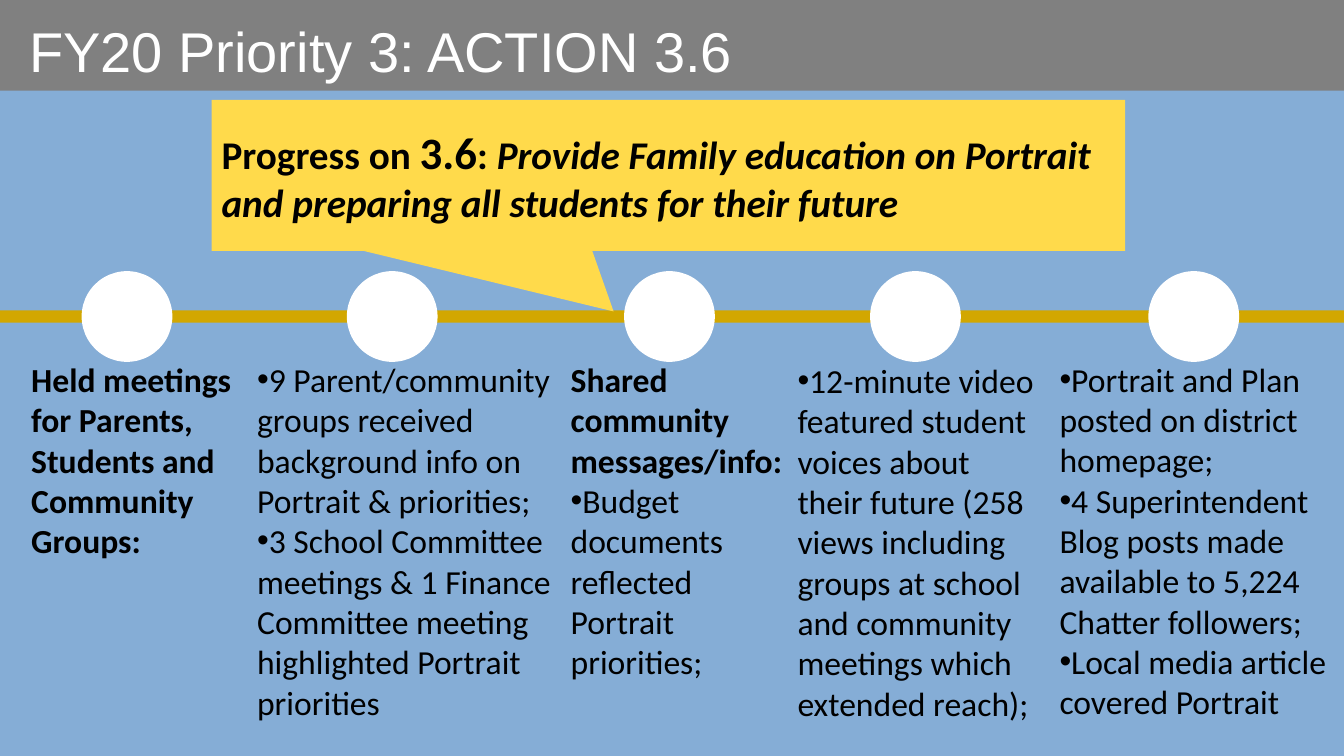
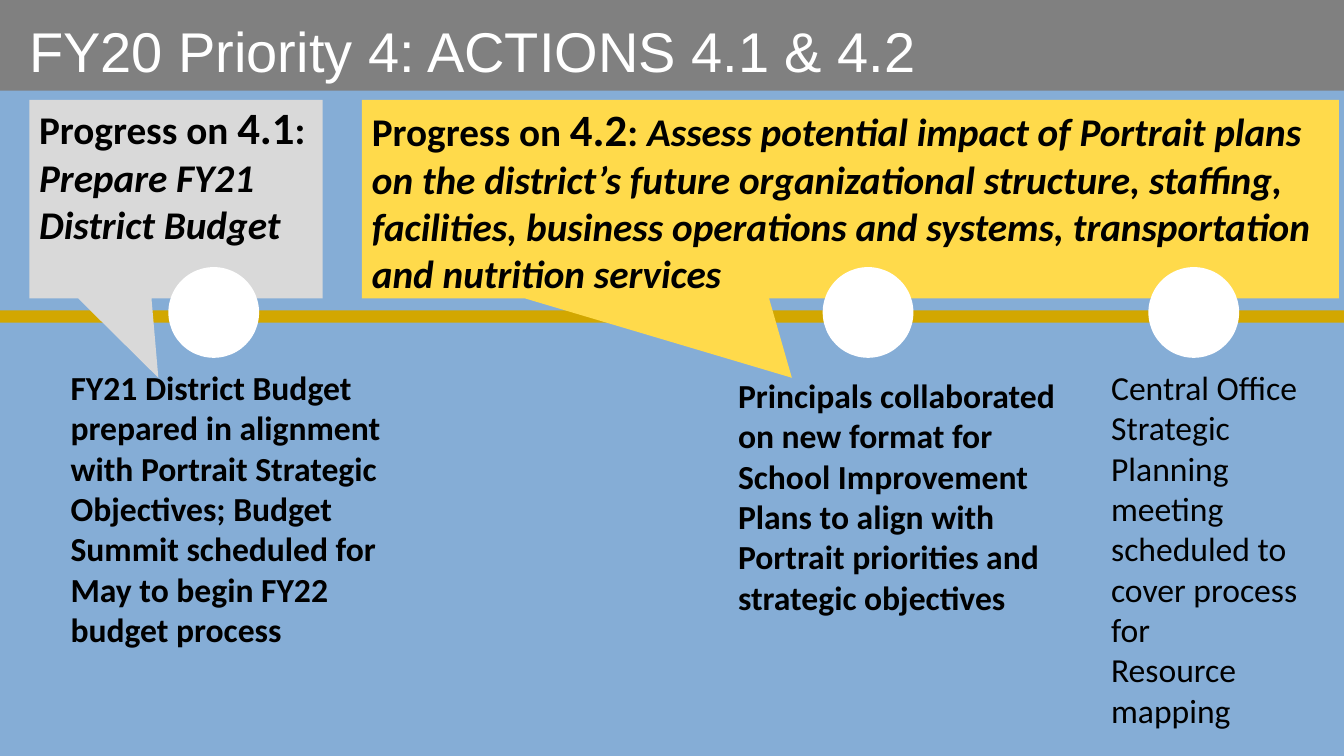
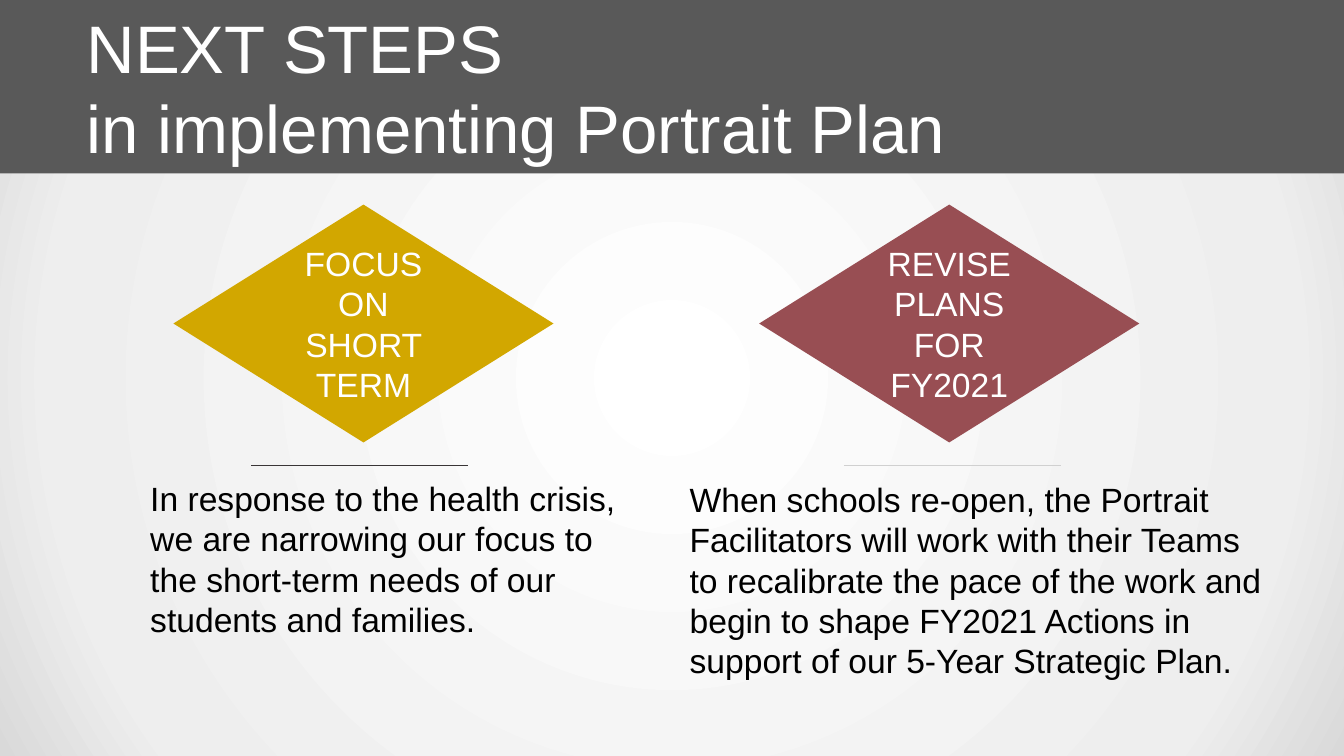
from typing import NamedTuple

from lxml.etree import SubElement
from pptx import Presentation
from pptx.dml.color import RGBColor
from pptx.enum.shapes import MSO_CONNECTOR, MSO_SHAPE
from pptx.enum.text import MSO_ANCHOR, MSO_AUTO_SIZE, PP_ALIGN
from pptx.oxml.ns import qn
from pptx.util import Inches, Pt

COLORS = {
    "sky": "85ADD6", "band": "808080", "dark_band": "595959", "gold": "D2A700",
    "yellow": "FFDA4B", "silver": "D9D9D9", "red": "984E53", "white": "FFFFFF",
    "black": "000000", "charcoal": "393536", "pale_line": "D0D0D0",
}
GLOW_STOPS = ((0, "FFFFFF"), (81, "EEEEEE"), (100, "D9D9D9"))
SLIDE_WIDTH, SLIDE_HEIGHT = 13.33, 7.5
COMPARISON_LAYOUT = 4
CIRCLE_SIZE = 0.9
LINE_FACTOR = 1.2


class Box(NamedTuple):
    left: float
    top: float
    width: float
    height: float


class Line(NamedTuple):
    text: str
    bold: bool = False
    bullet: bool = False
    indent: float = 0


class Column(NamedTuple):
    box: Box
    lines: list[Line]
    font: str = "Calibri"


class Title(NamedTuple):
    lines: list[str]
    color: str
    height: float
    inset: float
    size: int
    drop: float = 0


class Callout(NamedTuple):
    box: Box
    color: str
    action: str
    goal: str
    anchor: MSO_ANCHOR = MSO_ANCHOR.MIDDLE


class Timeline(NamedTuple):
    title: Title
    callouts: list[Callout]
    circle_top: float
    circle_lefts: list[float]
    columns: list[Column]


class Step(NamedTuple):
    left: float
    color: str
    label: str
    rule_left: float
    rule_color: str


def rgb(name: str) -> RGBColor:
    return RGBColor.from_string(COLORS[name])


def place(shape, box: Box) -> None:
    shape.left, shape.top, shape.width, shape.height = map(Inches, box)


def add_filled(page, kind: MSO_SHAPE, box: Box, color: str):
    shape = page.shapes.add_shape(kind, *map(Inches, box))
    shape.shadow.inherit = False
    shape.fill.solid()
    shape.fill.fore_color.rgb = rgb(color)
    shape.line.fill.background()
    return shape


def set_bullet(para, line: Line) -> None:
    properties = para._p.get_or_add_pPr()
    properties.set("marL", str(Inches(line.indent)))
    properties.set("indent", "0")
    if line.bullet:
        SubElement(properties, qn("a:buFont"), typeface="Arial")
        SubElement(properties, qn("a:buChar"), char="•")
    else:
        SubElement(properties, qn("a:buNone"))


def write(frame, lines: list[Line], size: int, font: str, color: str,
          align: PP_ALIGN = PP_ALIGN.LEFT) -> None:
    frame.word_wrap = True
    frame.auto_size = MSO_AUTO_SIZE.NONE
    for index, line in enumerate(lines):
        para = frame.paragraphs[0] if index == 0 else frame.add_paragraph()
        para.text = line.text
        para.alignment = align
        para.space_before = para.space_after = Pt(0)
        para.line_spacing = Pt(size * LINE_FACTOR)
        set_bullet(para, line)
        para.font.size, para.font.name = Pt(size), font
        para.font.bold = line.bold
        para.font.color.rgb = rgb(color)


def add_page(deck, title: Title, columns: list[Column]):
    """Add a page whose title forms the top band, with its text columns."""
    page = deck.slides.add_slide(deck.slide_layouts[COMPARISON_LAYOUT])
    heading = page.shapes.title
    place(heading, Box(0, 0, SLIDE_WIDTH, title.height))
    heading.fill.solid()
    heading.fill.fore_color.rgb = rgb(title.color)
    frame = heading.text_frame
    frame.vertical_anchor = MSO_ANCHOR.MIDDLE
    frame.margin_left = Inches(title.inset)
    frame.margin_top, frame.margin_bottom = Inches(title.drop), 0
    write(frame, [Line(text) for text in title.lines], title.size, "Arial", "white")

    bodies = [holder for holder in page.placeholders if holder.placeholder_format.idx > 0]
    for column in columns:
        if bodies:
            body = bodies.pop(0)
            place(body, column.box)
        else:
            body = page.shapes.add_textbox(*map(Inches, column.box))
        body.text_frame.vertical_anchor = MSO_ANCHOR.TOP
        write(body.text_frame, column.lines, 24, column.font, "black")
    for spare in bodies:
        spare.element.getparent().remove(spare.element)
    return page


def add_callout(page, callout: Callout) -> None:
    shape = add_filled(page, MSO_SHAPE.RECTANGULAR_CALLOUT, callout.box, callout.color)
    shape.adjustments[0], shape.adjustments[1] = -0.06, 0.9
    frame = shape.text_frame
    frame.word_wrap = True
    frame.vertical_anchor = callout.anchor
    frame.margin_top = frame.margin_bottom = 0
    para = frame.paragraphs[0]
    para.alignment = PP_ALIGN.LEFT
    para.font.name, para.font.bold = "Calibri", True
    para.font.color.rgb = rgb("black")
    for text, size, italic in (("Progress on ", 28, False), (callout.action, 32, False),
                               (": ", 28, False), (callout.goal, 28, True)):
        span = para.add_run()
        span.text = text
        span.font.size, span.font.italic = Pt(size), italic


def add_timeline(deck, timeline: Timeline) -> None:
    page = add_page(deck, timeline.title, timeline.columns)
    page.background.fill.solid()
    page.background.fill.fore_color.rgb = rgb("sky")
    add_filled(page, MSO_SHAPE.RECTANGLE, Box(0, 3.08, SLIDE_WIDTH, 0.12), "gold")
    for callout in timeline.callouts:
        add_callout(page, callout)
    for left in timeline.circle_lefts:
        circle = Box(left, timeline.circle_top, CIRCLE_SIZE, CIRCLE_SIZE)
        add_filled(page, MSO_SHAPE.OVAL, circle, "white")


def set_glow(page) -> None:
    """Give the page a radial gradient, lightest in the middle."""
    page.background.fill.gradient()
    gradient = page.element.find(".//" + qn("a:gradFill"))
    for child in list(gradient):
        gradient.remove(child)
    stops = SubElement(gradient, qn("a:gsLst"))
    for percent, color in GLOW_STOPS:
        stop = SubElement(stops, qn("a:gs"), pos=str(percent * 1000))
        SubElement(stop, qn("a:srgbClr"), val=color)
    circle = SubElement(gradient, qn("a:path"), {"path": "circle"})
    SubElement(circle, qn("a:fillToRect"), dict.fromkeys("ltrb", "50000"))


def add_step(page, step: Step) -> None:
    diamond = add_filled(page, MSO_SHAPE.DIAMOND, Box(step.left, 2.03, 3.77, 2.36), step.color)
    diamond.text_frame.vertical_anchor = MSO_ANCHOR.MIDDLE
    write(diamond.text_frame, [Line(step.label)], 24, "Arial", "white", PP_ALIGN.CENTER)
    rule = page.shapes.add_connector(
        MSO_CONNECTOR.STRAIGHT, Inches(step.rule_left), Inches(4.62),
        Inches(step.rule_left + 2.15), Inches(4.62))
    rule.line.color.rgb = rgb(step.rule_color)
    rule.line.width = Pt(0.75)
    SubElement(rule._element.spPr, qn("a:effectLst"))


def priority_title(text: str) -> Title:
    return Title([text], "band", 0.9, 0.29, 40, 0.1)


def bullets(*texts: str, indent: float = 0.2) -> list[Line]:
    return [Line(text, bullet=True, indent=indent) for text in texts]


TIMELINES = [
    Timeline(
        priority_title("FY20 Priority 3: ACTION 3.6"),
        [Callout(Box(2.1, 0.99, 9.06, 1.5), "yellow", "3.6",
                 "Provide Family education on Portrait and preparing all students "
                 "for their future")],
        2.69, [0.81, 3.44, 6.19, 8.63, 11.39],
        [
            Column(Box(0.21, 3.51, 2.36, 2.12), [
                Line("Held meetings for Parents, Students and Community Groups:", bold=True)]),
            Column(Box(2.25, 3.51, 3.46, 3.9), bullets(
                "9 Parent/community groups received background info on Portrait & priorities;",
                "3 School Committee meetings & 1 Finance Committee meeting highlighted "
                "Portrait priorities")),
            Column(Box(5.56, 3.51, 2.36, 3.74), [
                Line("Shared community messages/info:", bold=True),
                *bullets("Budget documents reflected Portrait priorities;", indent=0)]),
            Column(Box(7.61, 3.52, 2.83, 3.74), bullets(
                "12-minute video featured student voices about their future (258 views "
                "including groups at school and community meetings which extended reach);")),
            Column(Box(10.21, 3.51, 3.12, 3.9), bullets(
                "Portrait and Plan posted on district homepage;",
                "4 Superintendent Blog posts made available to 5,224 Chatter followers;",
                "Local media article covered Portrait")),
        ],
    ),
    Timeline(
        priority_title("FY20 Priority 4: ACTIONS 4.1 & 4.2"),
        [
            Callout(Box(0.29, 0.99, 2.91, 1.97), "silver", "4.1",
                    "Prepare FY21 District Budget", MSO_ANCHOR.TOP),
            Callout(Box(3.59, 0.99, 9.69, 1.97), "yellow", "4.2",
                    "Assess potential impact of Portrait plans on the district’s future "
                    "organizational structure, staffing, facilities, business operations "
                    "and systems, transportation and nutrition services"),
        ],
        2.65, [1.67, 8.16, 11.39],
        [
            Column(Box(0.6, 3.59, 3.62, 2.93), [
                Line("FY21 District Budget prepared in alignment with Portrait Strategic "
                     "Objectives; Budget Summit scheduled for May to begin FY22 budget "
                     "process", bold=True)]),
            Column(Box(7.22, 3.67, 3.39, 2.52), [
                Line("Principals collaborated on new format for School Improvement Plans to "
                     "align with Portrait priorities and strategic objectives", bold=True)]),
            Column(Box(10.92, 3.59, 2.41, 3.74), [
                Line("Central Office Strategic Planning meeting scheduled to cover process for"),
                Line("Resource mapping")]),
        ],
    ),
]

NEXT_TITLE = Title(["NEXT STEPS", "in implementing Portrait Plan"], "dark_band", 1.72, 0.86, 48)
NEXT_COLUMNS = [
    Column(Box(1.39, 4.69, 4.88, 1.72), [
        Line("In response to the health crisis, we are narrowing our focus to the short-term "
             "needs of our students and families.")], "Arial"),
    Column(Box(6.74, 4.7, 5.91, 2.12), [
        Line("When schools re-open, the Portrait Facilitators will work with their Teams to "
             "recalibrate the pace of the work and begin to shape FY2021 Actions in support "
             "of our 5-Year Strategic Plan.")], "Arial"),
]
STEPS = [
    Step(1.72, "gold", "FOCUS ON SHORT TERM", 2.49, "charcoal"),
    Step(7.53, "red", "REVISE PLANS FOR FY2021", 8.37, "pale_line"),
]


def main() -> None:
    deck = Presentation()
    deck.slide_width, deck.slide_height = Inches(SLIDE_WIDTH), Inches(SLIDE_HEIGHT)
    for timeline in TIMELINES:
        add_timeline(deck, timeline)
    page = add_page(deck, NEXT_TITLE, NEXT_COLUMNS)
    set_glow(page)
    for step in STEPS:
        add_step(page, step)
    deck.save("out.pptx")


if __name__ == "__main__":
    main()
